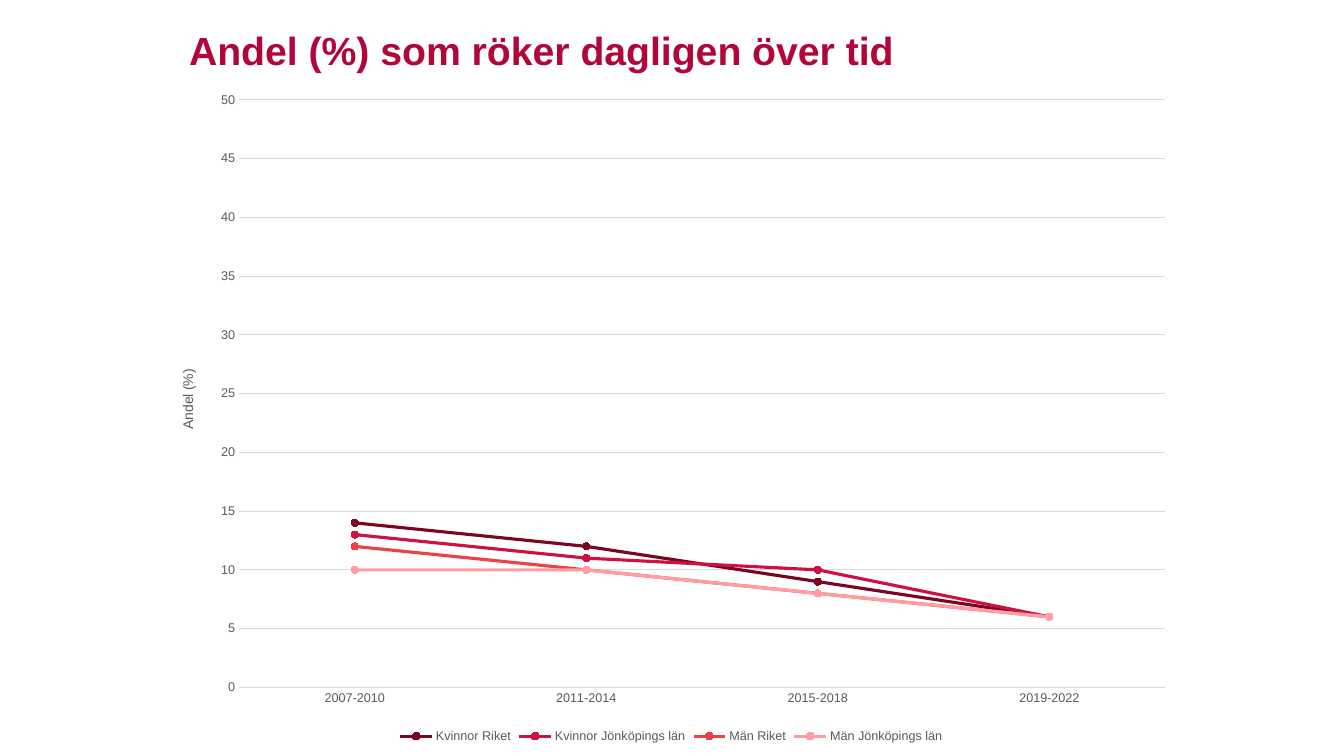
from lxml import etree
from pptx import Presentation
from pptx.chart.data import CategoryChartData
from pptx.dml.color import RGBColor
from pptx.enum.chart import (XL_CHART_TYPE, XL_LEGEND_POSITION,
                             XL_MARKER_STYLE, XL_TICK_MARK)
from pptx.enum.text import MSO_AUTO_SIZE
from pptx.oxml.ns import qn
from pptx.util import Pt

LINE = XL_CHART_TYPE.LINE_MARKERS
BOTTOM = XL_LEGEND_POSITION.BOTTOM
DOT = XL_MARKER_STYLE.CIRCLE
NO_TICK = XL_TICK_MARK.NONE
GROW = MSO_AUTO_SIZE.SHAPE_TO_FIT_TEXT

COLORS = {
    "title": "B1063A",
    "text": "595959",
    "grid": "D9D9D9",
    "Kvinnor Riket": "790721",
    "Kvinnor Jönköpings län": "CE1141",
    "Män Riket": "EF4044",
    "Män Jönköpings län": "FF9DA2",
}
YEARS = ["2007-2010", "2011-2014", "2015-2018", "2019-2022"]
SHARES = {
    "Kvinnor Riket": (14, 12, 9, 6),
    "Kvinnor Jönköpings län": (13, 11, 10, 6),
    "Män Riket": (12, 10, 8, 6),
    "Män Jönköpings län": (10, 10, 8, 6),
}
# Inner plot area as fractions of the chart
PLOT = {"x": 0.08, "y": 0.03, "w": 0.9, "h": 0.88}


def style(font, size, color, bold=False):
    font.name = "Arial"
    font.size = Pt(size)
    font.bold = bold
    font.color.rgb = RGBColor.from_string(COLORS[color])


def stroke(line, width, color):
    line.width = Pt(width)
    line.color.rgb = RGBColor.from_string(COLORS[color])


prs = Presentation()
prs.slide_width, prs.slide_height = Pt(960), Pt(540)
slide = prs.slides.add_slide(prs.slide_layouts[6])

# Chart
data = CategoryChartData(number_format="0")
data.categories = YEARS
for name, vals in SHARES.items():
    data.add_series(name, vals)
chart = slide.shapes.add_chart(
    LINE, Pt(112), Pt(57), Pt(735), Pt(477), data).chart
chart.has_title = False
chart.font.name = "Arial"
chart.font.size = Pt(10)

for series in chart.plots[0].series:
    series.smooth = False
    stroke(series.format.line, 2.25, series.name)
    mark = series.marker
    mark.style = DOT
    mark.size = 5
    mark.format.fill.solid()
    mark.format.fill.fore_color.rgb = RGBColor.from_string(COLORS[series.name])
    stroke(mark.format.line, 0.75, series.name)

# Axes
years, share = chart.category_axis, chart.value_axis
for axis in (years, share):
    axis.major_tick_mark = axis.minor_tick_mark = NO_TICK
    style(axis.tick_labels.font, 9, "text")
stroke(years.format.line, 0.75, "grid")
share.minimum_scale, share.maximum_scale, share.major_unit = 0, 50, 5
share.format.line.fill.background()
share.has_major_gridlines = True
stroke(share.major_gridlines.format.line, 0.75, "grid")
label = share.axis_title.text_frame
label.text = "Andel (%)"
style(label.paragraphs[0].runs[0].font, 10, "text")

# Legend
chart.has_legend = True
chart.legend.position = BOTTOM
chart.legend.include_in_layout = False
style(chart.legend.font, 9, "text")

# Fixed plot area
area = chart.plots[0]._element.getparent()
for old in area.findall(qn("c:layout")):
    area.remove(old)
layout = etree.Element(qn("c:layout"))
area.insert(0, layout)
manual = etree.SubElement(layout, qn("c:manualLayout"))
rules = {"layoutTarget": "inner", "xMode": "edge", "yMode": "edge", **PLOT}
for tag, val in rules.items():
    etree.SubElement(manual, qn(f"c:{tag}")).set("val", str(val))

# Heading
box = slide.shapes.add_textbox(Pt(128), Pt(15), Pt(524), Pt(41))
frame = box.text_frame
frame.text = "Andel (%) som röker dagligen över tid"
frame.word_wrap = False
frame.auto_size = GROW
head = frame.paragraphs[0]
head.space_after = Pt(18)
style(head.runs[0].font, 28, "title", bold=True)

prs.save("out.pptx")
